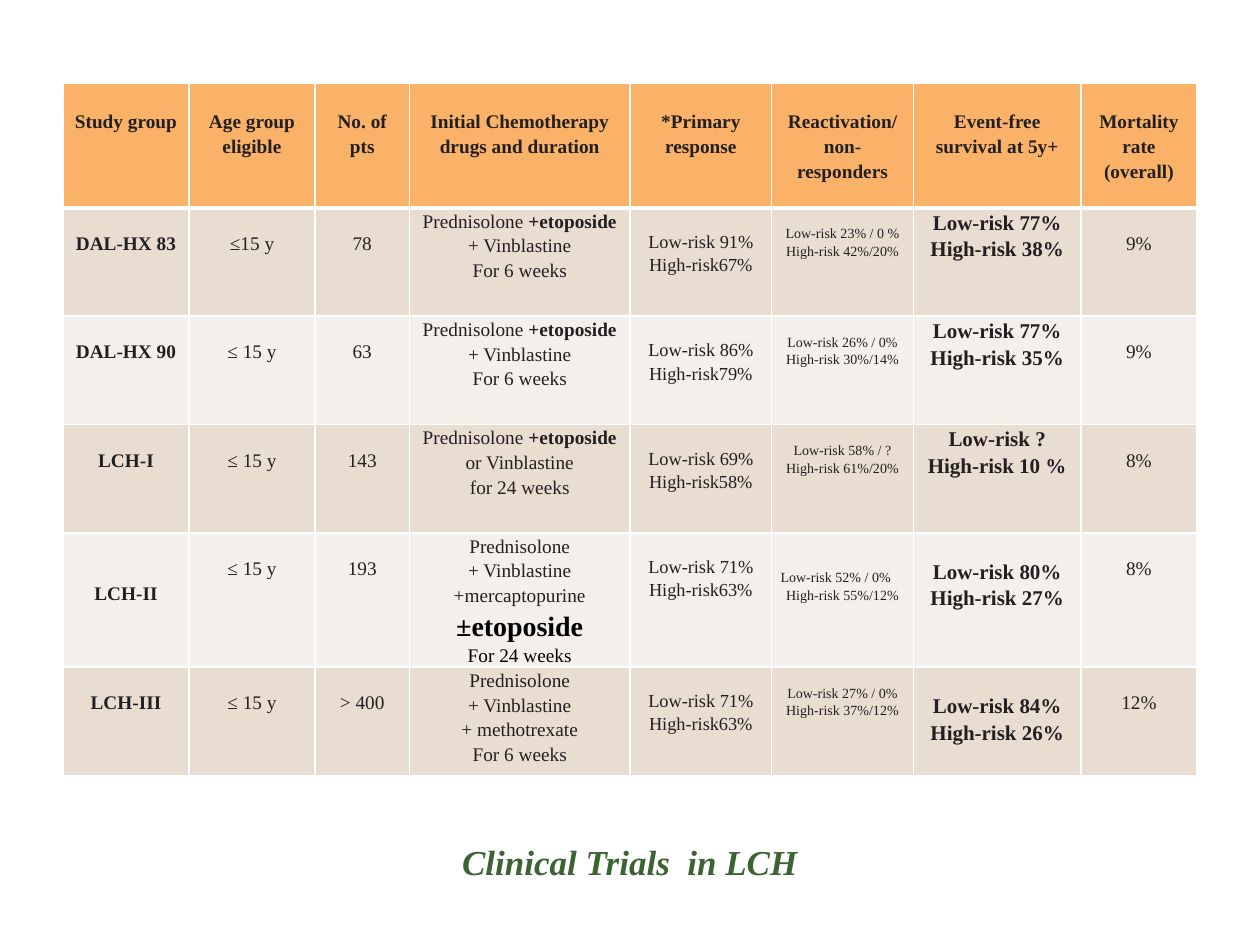
"""Build a slide with a table of clinical trials in LCH."""
import dataclasses
import typing

import pptx
import pptx.dml.color
import pptx.enum.text
import pptx.oxml
import pptx.oxml.ns
import pptx.util

Pt = pptx.util.Pt
Align = pptx.enum.text.PP_ALIGN


@dataclasses.dataclass(frozen=True)
class Theme:
    font: str = "Times New Roman"
    ink: str = "231F20"
    black: str = "000000"
    green: str = "3B6432"
    head: str = "F9B268"
    bands: tuple[str, str] = ("E9DDD1", "F4EFEA")
    rule: str = "FFFFFF"
    title: float = 20
    big: float = 16
    body: float = 11
    lead: float = 1.15


THEME = Theme()


@dataclasses.dataclass(frozen=True)
class Line:
    text: str
    strong: str = ""
    size: float | None = None
    ink: str = THEME.ink
    left: bool = False


@dataclasses.dataclass(frozen=True)
class Col:
    head: str
    width: float
    size: float = THEME.body
    bold: bool = False


class Trial(typing.NamedTuple):
    cells: tuple[str | tuple[Line, ...], ...]
    skips: tuple[int, ...]
    height: float = 0.86


COLS = (
    Col("Study group", 1, bold=True),
    Col("Age group eligible", 1),
    Col("No. of pts", 0.75),
    Col("Initial Chemotherapy drugs and duration", 1.75),
    Col("*Primary response", 1.125, 10.5),
    Col("Reactivation/ non-responders", 1.125, 8),
    Col("Event-free\nsurvival at 5y+", 1.33, 12, True),
    Col("Mortality rate\n(overall)", 0.92),
)

PLAIN = (1, 1, 1, 0, 1, 1, 0, 1)
LOWER = (1, 1, 1, 0, 1, 1, 1, 1)
DEEP = (2, 1, 1, 0, 1, 2, 1, 1)


def mix(*rest: str) -> tuple[Line, ...]:
    """Return a drug list that opens with prednisolone and etoposide."""
    return (Line("Prednisolone ", "+etoposide"), *map(Line, rest))


TRIALS = (
    Trial(("DAL-HX 83", "≤15 y", "78", mix("+ Vinblastine", "For 6 weeks"),
           "Low-risk 91%\nHigh-risk67%", "Low-risk 23% / 0 %\nHigh-risk 42%/20%",
           "Low-risk 77%\nHigh-risk 38%", "9%"), PLAIN),
    Trial(("DAL-HX 90", "≤ 15 y", "63", mix("+ Vinblastine", "For 6 weeks"),
           "Low-risk 86%\nHigh-risk79%", "Low-risk 26% / 0%\nHigh-risk 30%/14%",
           "Low-risk 77%\nHigh-risk 35%", "9%"), PLAIN),
    Trial(("LCH-I", "≤ 15 y", "143", mix("or Vinblastine", "for 24 weeks"),
           "Low-risk 69%\nHigh-risk58%", "Low-risk 58% / ?\nHigh-risk 61%/20%",
           "Low-risk ?\nHigh-risk 10 %", "8%"), PLAIN),
    Trial(("LCH-II", "≤ 15 y", "193",
           (Line("Prednisolone"), Line("+ Vinblastine"), Line("+mercaptopurine"),
            Line("", "±etoposide", THEME.big, THEME.black),
            Line("For 24 weeks", ink=THEME.black)),
           "Low-risk 71%\nHigh-risk63%",
           (Line("Low-risk 52% / 0%", left=True), Line("High-risk 55%/12%")),
           "Low-risk 80%\nHigh-risk 27%", "8%"), DEEP, 0.89),
    Trial(("LCH-III", "≤ 15 y", "> 400",
           "Prednisolone\n+ Vinblastine\n+ methotrexate\nFor 6 weeks",
           "Low-risk 71%\nHigh-risk63%", "Low-risk 27% / 0%\nHigh-risk 37%/12%",
           "Low-risk 84%\nHigh-risk 26%", "12%"), LOWER),
)


def style(font, size: float, ink: str, bold: bool) -> None:
    """Set the theme font with the given size, colour and weight."""
    font.name, font.size, font.bold = THEME.font, Pt(size), bold
    font.color.rgb = pptx.dml.color.RGBColor.from_string(ink)


def edge(cell, base: float) -> None:
    """Draw the cell's four borders, with its own width at the base."""
    props = cell._tc.get_or_add_tcPr()
    space = pptx.oxml.ns.nsdecls("a")
    sides = {"lnL": 1, "lnR": 1, "lnT": 1, "lnB": base}
    for spot, (tag, width) in enumerate(sides.items()):
        props.insert(spot, pptx.oxml.parse_xml(
            f'<a:{tag} {space} w="{Pt(width)}"><a:solidFill>'
            f'<a:srgbClr val="{THEME.rule}"/></a:solidFill></a:{tag}>'))


def fill(cell, text, size: float, bold: bool, tint: str, skip: float, base: float = 1) -> None:
    """Write lines into a cell below the skipped height and colour it."""
    cell.fill.solid()
    cell.fill.fore_color.rgb = pptx.dml.color.RGBColor.from_string(tint)
    edge(cell, base)
    cell.margin_left = cell.margin_right = pptx.util.Inches(0.07)
    cell.margin_top, cell.margin_bottom = Pt(skip), 0
    lines = tuple(map(Line, text.split("\n"))) if isinstance(text, str) else text
    for spot, line in enumerate(lines):
        frame = cell.text_frame
        para = frame.add_paragraph() if spot else frame.paragraphs[0]
        para.alignment = Align.LEFT if line.left else Align.CENTER
        para.line_spacing = THEME.lead
        heavy = bold or not line.text
        style(para.font, line.size or size, line.ink, heavy)
        if line.text:
            para.add_run().text = line.text
        if line.strong:
            run = para.add_run()
            run.text = line.strong
            if not heavy:
                run.font.bold = True


def drop(size: float, count: int) -> float:
    """Return the height in points of the lines skipped above a text."""
    tall = size * THEME.lead
    return tall * (1 + THEME.lead * (count - 1)) if count else 0


def grid(slide, wide: int, high: int) -> None:
    """Draw the table of trials."""
    tall = (0.99, *(trial.height for trial in TRIALS))
    table = slide.shapes.add_table(
        len(tall), len(COLS), int(wide * 0.05), int(high * 0.088),
        int(wide * 0.9), pptx.util.Inches(sum(tall))).table
    table.first_row = table.horz_banding = False
    for row, size in zip(table.rows, tall):
        row.height = pptx.util.Inches(size)
    for x, col in enumerate(COLS):
        table.columns[x].width = pptx.util.Inches(col.width)
        fill(table.cell(0, x), col.head, THEME.body, True, THEME.head,
             drop(THEME.body, 1) * THEME.lead, 3)
        for y, trial in enumerate(TRIALS):
            fill(table.cell(y + 1, x), trial.cells[x], col.size, col.bold,
                 THEME.bands[y % 2], drop(col.size, trial.skips[x]))


def label(slide, wide: int, high: int) -> None:
    """Write the title under the table."""
    frame = slide.shapes.add_textbox(
        int(wide * 0.05), int(high * 0.867), int(wide * 0.9), int(high * 0.09)).text_frame
    frame.word_wrap = True
    frame.vertical_anchor = pptx.enum.text.MSO_ANCHOR.MIDDLE
    para = frame.paragraphs[0]
    para.text, para.alignment = "Clinical Trials  in LCH", Align.CENTER
    style(para.font, THEME.title, THEME.green, True)
    para.font.italic = True


def main() -> None:
    """Build and save the slide."""
    deck = pptx.Presentation()
    deck.slide_width, deck.slide_height = pptx.util.Inches(10), pptx.util.Inches(7.5)
    slide = deck.slides.add_slide(deck.slide_layouts[6])
    grid(slide, deck.slide_width, deck.slide_height)
    label(slide, deck.slide_width, deck.slide_height)
    deck.save("out.pptx")


if __name__ == "__main__":
    main()
